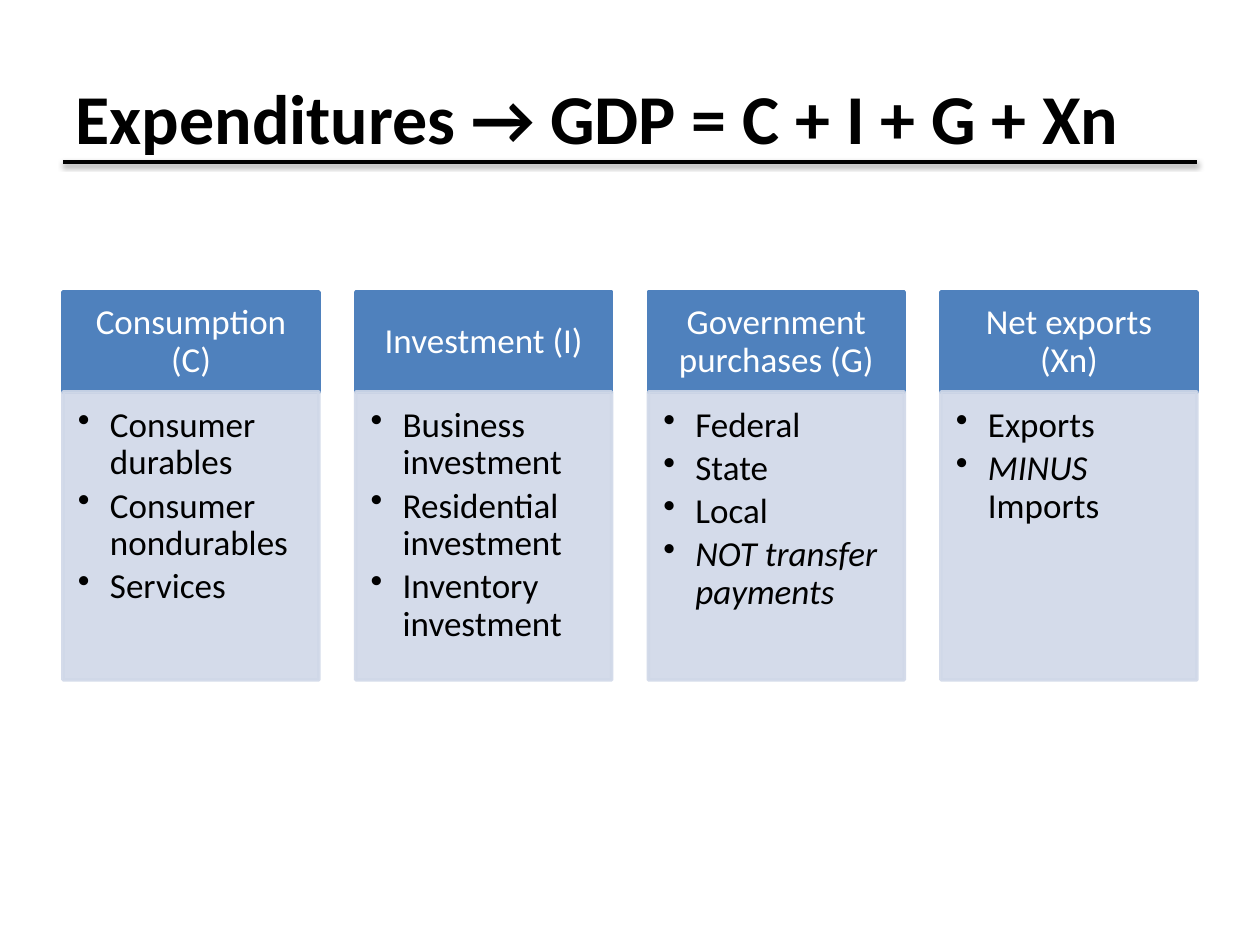
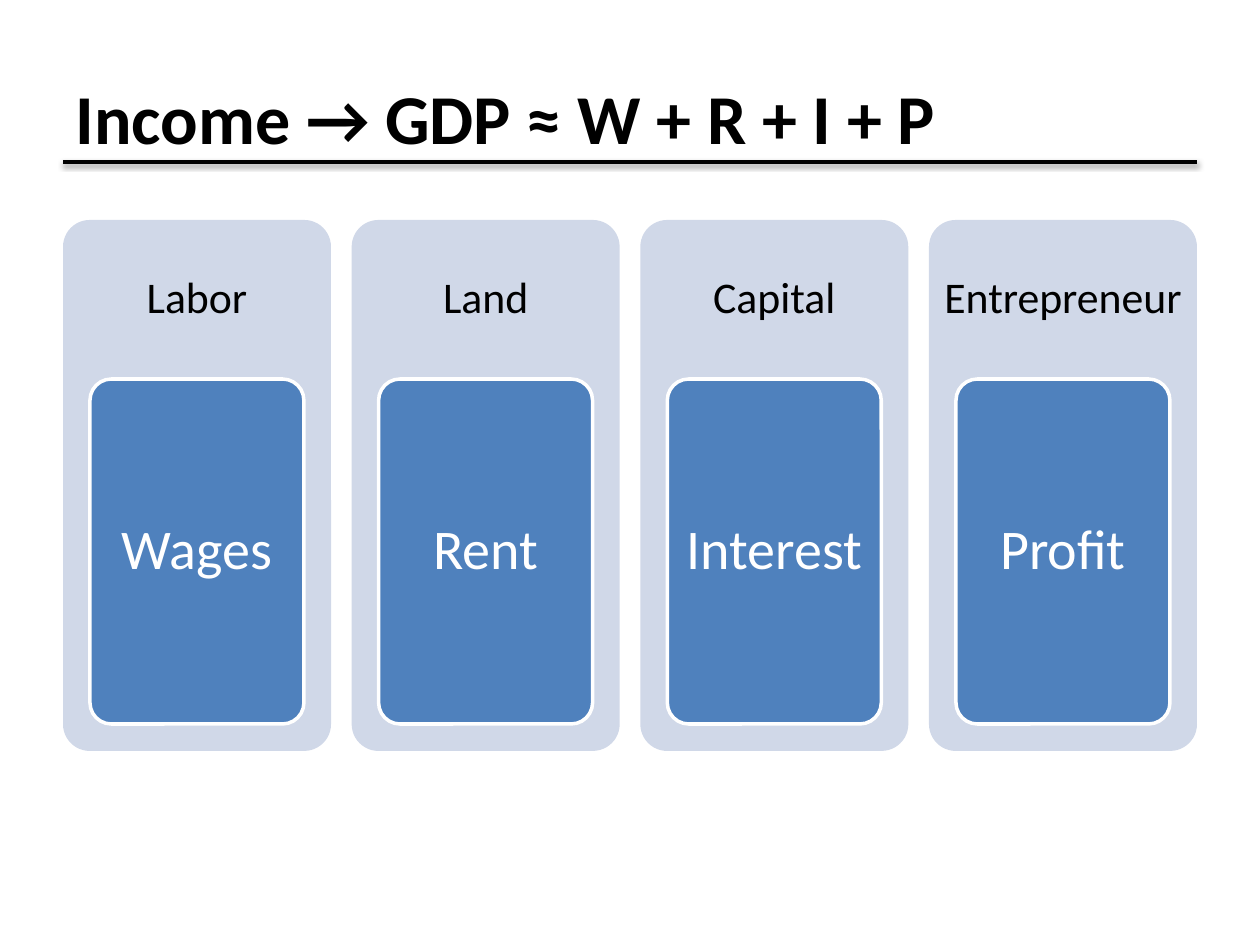
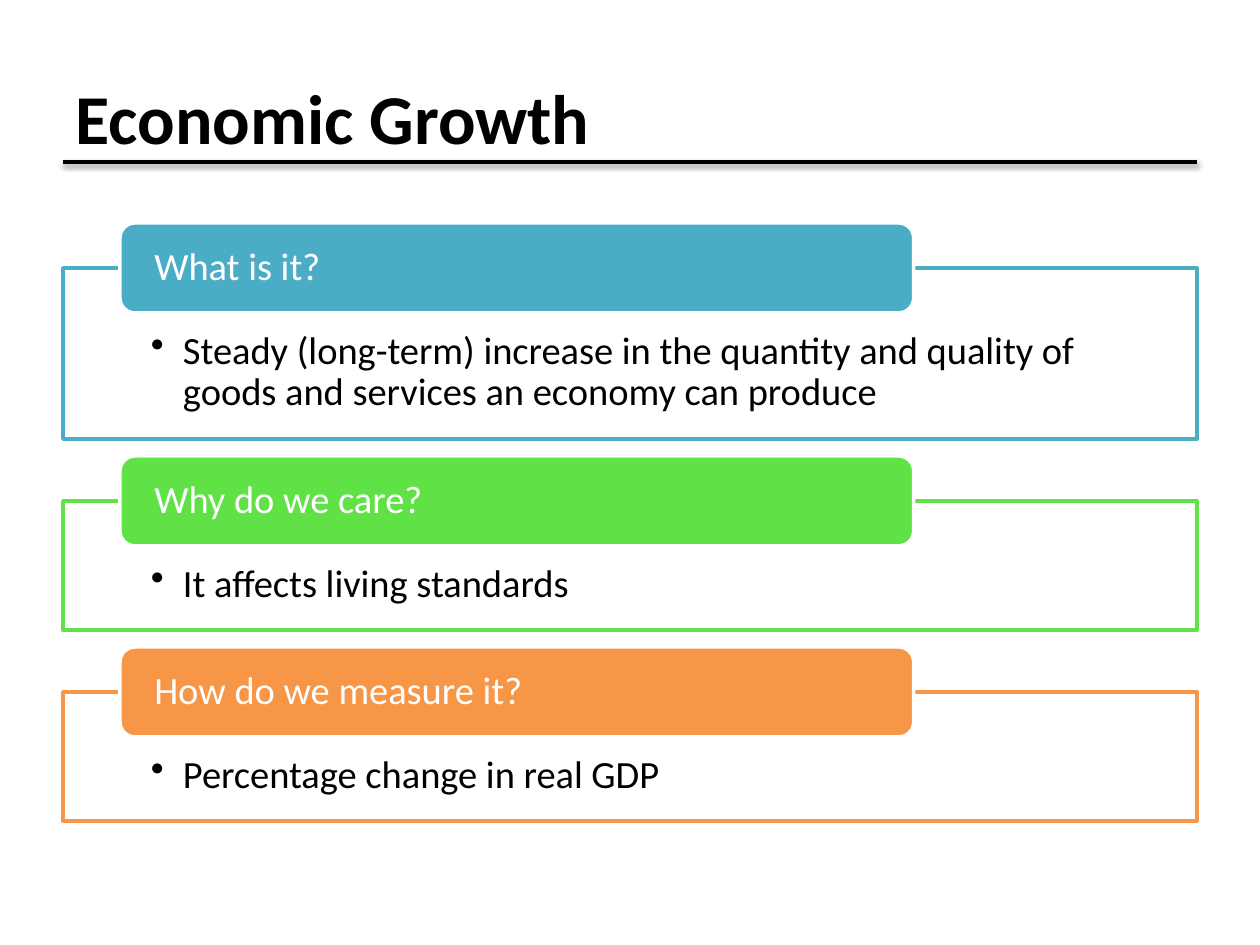
from lxml.etree import SubElement as Sub
from pptx import Presentation
from pptx.dml.color import RGBColor as Rgb
from pptx.enum.shapes import MSO_CONNECTOR as Conn, MSO_SHAPE as Form
from pptx.enum.text import MSO_ANCHOR as Anchor, PP_ALIGN as Align
from pptx.oxml.ns import qn
from pptx.util import Emu, Pt

SCALE = 914400 / 126
BLACK = Rgb(0x00, 0x00, 0x00)
WHITE = Rgb(0xFF, 0xFF, 0xFF)
BLUE = Rgb(0x4F, 0x81, 0xBD)
PALE = Rgb(0xD0, 0xD8, 0xE8)
TEAL = Rgb(0x4B, 0xAC, 0xC6)
GREEN = Rgb(0x60, 0xE1, 0x46)
ORANGE = Rgb(0xF7, 0x96, 0x46)
FONT = "Calibri"
LEFT, WIDE = 63, 1134

SPEND = [
    ("Consumption (C)", ["Consumer durables", "Consumer nondurables", "Services"]),
    ("Investment (I)", ["Business investment", "Residential investment",
                        "Inventory investment"]),
    ("Government purchases (G)", ["Federal", "State", "Local",
                                  "*NOT transfer payments*"]),
    ("Net exports (Xn)", ["Exports", "*MINUS* Imports"]),
]
INCOME = [("Labor", "Wages"), ("Land", "Rent"), ("Capital", "Interest"),
          ("Entrepreneur", "Profit")]
GROWTH = [
    ("What is it?", "Steady (long-term) increase in the quantity and quality of "
     "goods and services an economy can produce", TEAL, 171),
    ("Why do we care?", "It affects living standards", GREEN, 129),
    ("How do we measure it?", "Percentage change in real GDP", ORANGE, 129),
]


def px(num):
    """Turn pixels into EMU."""
    return Emu(round(num * SCALE))


def assign(item, **vals):
    """Set each named value on the item."""
    for name, val in vals.items():
        setattr(item, name, val)


def place(item, box):
    """Move the item to a box in pixels."""
    assign(item, **dict(zip(("left", "top", "width", "height"), map(px, box))))


def block(slide, form, box, fill, line=None, fade=0, curve=None):
    """Add a filled shape, with its first few colours made 90% opaque."""
    shape = slide.shapes.add_shape(form, *map(px, box))
    shape.shadow.inherit = False
    shape.fill.solid()
    shape.fill.fore_color.rgb = fill
    if line is None:
        shape.line.fill.background()
    else:
        shape.line.color.rgb = line
        shape.line.width = Pt(2)
    if curve is not None:
        shape.adjustments[0] = curve
    for color in list(shape.element.iter(qn("a:srgbClr")))[:fade]:
        Sub(color, qn("a:alpha"), val="90000")
    return shape


def write(shape, items, size, color, pads, align=Align.CENTER,
          anchor=Anchor.MIDDLE, dots=False):
    """Fill the shape with paragraphs; text between stars is italic."""
    frame = shape.text_frame
    sides = ("margin_left", "margin_top", "margin_right", "margin_bottom")
    assign(frame, word_wrap=True, vertical_anchor=anchor,
           **dict(zip(sides, map(px, pads))))
    for num, item in enumerate(items):
        para = frame.add_paragraph() if num else frame.paragraphs[0]
        if dots:
            props = para._p.get_or_add_pPr()
            props.set("marL", str(px(32)))
            props.set("indent", str(-px(32)))
            Sub(props, qn("a:buChar"), char="•")
            assign(para, level=1, space_after=Pt(3))
        assign(para, alignment=align, line_spacing=0.9)
        for part, text in enumerate(item.split("*")):
            if text:
                run = para.add_run()
                run.text = text
                assign(run.font, name=FONT, size=Pt(size), italic=part % 2 == 1)
                run.font.color.rgb = color


def bullets(shape, items, size, pads):
    """Write a bulleted list from the top of the shape."""
    write(shape, items, size, BLACK, pads, Align.LEFT, Anchor.TOP, True)


def spread(count, wide):
    """Give the left edges of equal columns across the content width."""
    step = (WIDE - wide) / (count - 1)
    return [LEFT + num * step for num in range(count)]


def start(deck, title):
    """Add a slide with its title and shadowed rule."""
    slide = deck.slides.add_slide(deck.slide_layouts[5])
    rule = slide.shapes.add_connector(
        Conn.STRAIGHT, *map(px, (LEFT, 162, LEFT + WIDE, 162)))
    rule.line.color.rgb = BLACK
    rule.line.width = Pt(2)
    effects = Sub(rule.element.spPr, qn("a:effectLst"))
    shade = Sub(effects, qn("a:outerShdw"), blurRad="40000", dist="20000",
                dir="5400000", rotWithShape="0")
    color = Sub(shade, qn("a:srgbClr"), val=str(BLACK))
    Sub(color, qn("a:alpha"), val="38000")
    head = slide.shapes.title
    place(head, (LEFT, 38, WIDE, 157))
    head.text_frame.text = title
    head.text_frame.vertical_anchor = Anchor.MIDDLE
    para = head.text_frame.paragraphs[0]
    para.alignment = Align.LEFT
    assign(para.runs[0].font, name=FONT, size=Pt(40), bold=True)
    para.runs[0].font.color.rgb = BLACK
    return slide


def column(slide, box, name, items):
    """Draw a headed list column in the box."""
    left, top, wide, high = box
    cap = 100
    head = block(slide, Form.RECTANGLE, (left, top, wide, cap), BLUE, BLUE)
    write(head, [name], 20, WHITE, (20, 11, 20, 11))
    body = block(slide, Form.RECTANGLE, (left, top + cap, wide, high - cap),
                 PALE, PALE, fade=2)
    bullets(body, items, 20, (15, 15, 20, 21))


def card(slide, box, name, pay):
    """Draw a labelled card with its payment panel in the box."""
    left, top, wide, high = box
    cap, side = 159, 27
    outer = block(slide, Form.ROUNDED_RECTANGLE, box, PALE, curve=0.1)
    write(outer, [name], 25, BLACK, (5, 5, 5, high - cap + 5))
    inner = block(slide, Form.ROUNDED_RECTANGLE,
                  (left + side, top + cap, wide - 2 * side, high - cap - side),
                  BLUE, WHITE, curve=0.1)
    write(inner, [pay], 32, WHITE, (11, 9, 11, 9))


def panel(slide, box, ask, reply, color):
    """Draw an outlined answer with a question tab over its top edge."""
    left, top, wide, high = box
    body = block(slide, Form.RECTANGLE, box, WHITE, color, fade=1)
    bullets(body, [reply], 22, (88, 63, 88, 21))
    tab = block(slide, Form.ROUNDED_RECTANGLE,
                (left + 57, top - 45, wide * 0.7, 90), color, WHITE)
    write(tab, [ask], 22, WHITE, (30, 0, 30, 0), Align.LEFT)


def main():
    """Build and save the deck."""
    deck = Presentation()
    assign(deck, slide_width=px(1260), slide_height=px(945))

    slide = start(deck, "Expenditures → GDP = C + I + G + Xn")
    for left, (name, items) in zip(spread(len(SPEND), 256), SPEND):
        column(slide, (left, 292, 256, 388), name, items)

    slide = start(deck, "Income → GDP ≈ W + R + I + P")
    for left, (name, pay) in zip(spread(len(INCOME), 268), INCOME):
        card(slide, (left, 220, 268, 531), name, pay)

    slide = start(deck, "Economic Growth")
    top = 268
    for ask, reply, color, high in GROWTH:
        panel(slide, (LEFT, top, WIDE, high), ask, reply, color)
        top += high + 62

    deck.save("out.pptx")


if __name__ == "__main__":
    main()
